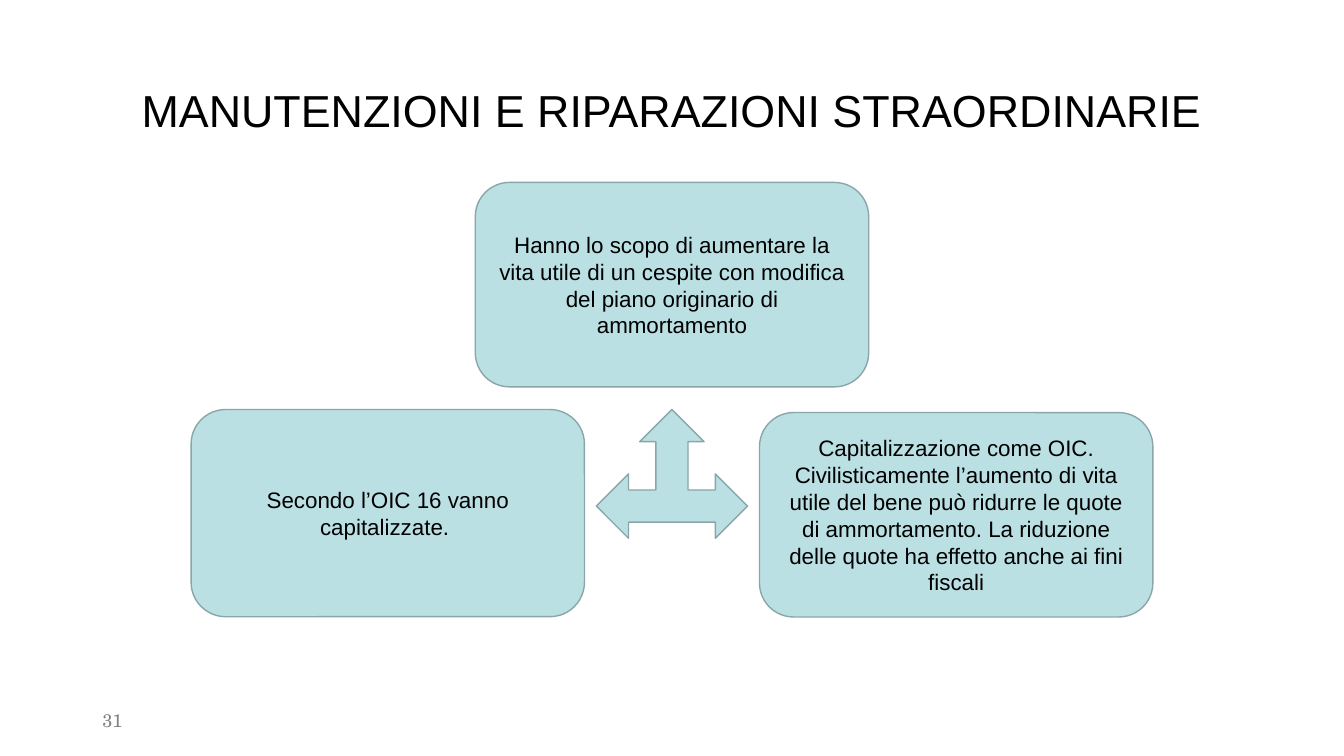
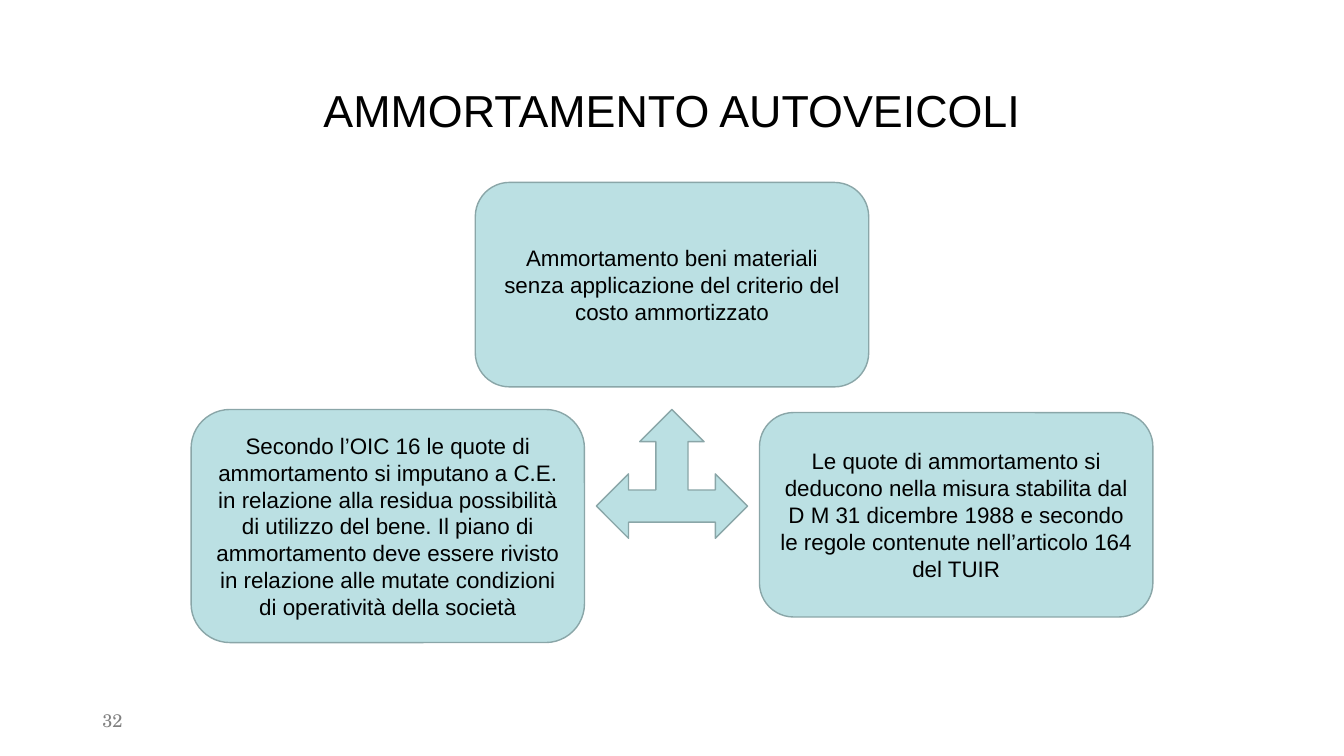
from pptx import Presentation
from pptx.dml.color import RGBColor
from pptx.enum.shapes import MSO_SHAPE
from pptx.enum.text import MSO_ANCHOR, MSO_AUTO_SIZE, PP_ALIGN
from pptx.util import Pt

ROUNDED = MSO_SHAPE.ROUNDED_RECTANGLE
THREE_WAY_ARROW = MSO_SHAPE.LEFT_RIGHT_UP_ARROW
MIDDLE = MSO_ANCHOR.MIDDLE
NO_FIT = MSO_AUTO_SIZE.NONE
LEFT, CENTER = PP_ALIGN.LEFT, PP_ALIGN.CENTER

COLORS = {"text": "000000", "number": "808080", "fill": "BBE0E3", "line": "8AA6A8"}
BODY_FONT, NUMBER_FONT = "Arial", "TeX Gyre Schola"

PAGE_WIDTH, PAGE_HEIGHT = 960, 540
MARGIN = 66
MIDDLE_X = PAGE_WIDTH / 2
BOX_WIDTH, BOX_HEIGHT = 281, 146
SIDE_OFFSET = 203  # from the page's middle to the near edge's opposite side box center
SIDE_CENTER = SIDE_OFFSET
ARROW_WIDTH, ARROW_HEIGHT = 108, 92
TOP_Y, ARROW_Y, RIGHT_Y = 130.3, 292.5, 294.7

FIRST_NUMBER = 31
SLIDES = [
    {
        "title": "MANUTENZIONI E RIPARAZIONI STRAORDINARIE",
        "top": "Hanno lo scopo di aumentare la vita utile di un cespite con modifica "
               "del piano originario di ammortamento",
        "left": "Secondo l’OIC 16 vanno capitalizzate. ",
        "left_height": 148,
        "right": "Capitalizzazione come OIC. Civilisticamente l’aumento di vita utile del "
                 "bene può ridurre le quote di ammortamento. La riduzione delle quote ha "
                 "effetto anche ai fini fiscali",
    },
    {
        "title": "AMMORTAMENTO AUTOVEICOLI",
        "top": "Ammortamento beni materiali senza applicazione del criterio del costo "
               "ammortizzato",
        "left": "Secondo l’OIC 16 le quote di ammortamento si imputano a C.E. in relazione "
                "alla residua possibilità di utilizzo del bene. Il piano di ammortamento "
                "deve essere rivisto in relazione alle mutate condizioni di operatività "
                "della società",
        "left_height": 166.5,
        "right": "Le quote di ammortamento si deducono nella misura stabilita dal D M 31 "
                 "dicembre 1988 e secondo le regole contenute nell’articolo 164 del TUIR",
    },
]


def write(shape, text, size, color="text", font=BODY_FONT, align=CENTER, spacing=1.0):
    frame = shape.text_frame
    frame.word_wrap = True
    frame.auto_size = NO_FIT
    frame.vertical_anchor = MIDDLE
    para = frame.paragraphs[0]
    para.text = text
    para.alignment = align
    para.line_spacing = spacing
    para.font.name = font
    para.font.size = Pt(size)
    para.font.color.rgb = RGBColor.from_string(COLORS[color])


def add_title(page, text):
    title = page.shapes.title
    title.left, title.top = Pt(MARGIN), Pt(29)
    title.width, title.height = Pt(PAGE_WIDTH - 2 * MARGIN), Pt(104)
    write(title, text, 32, spacing=0.9)


def add_number(page, number):
    box = page.shapes.add_textbox(Pt(MARGIN), Pt(500.5), Pt(216), Pt(29))
    write(box, str(number), 13, "number", NUMBER_FONT, LEFT, 0.93)


def add_centered_shape(page, kind, center_x, top, width, height):
    """Add a shape in the common fill and line, centred on center_x."""
    shape = page.shapes.add_shape(
        kind, Pt(center_x - width / 2), Pt(top), Pt(width), Pt(height))
    shape.shadow.inherit = False
    shape.fill.solid()
    shape.fill.fore_color.rgb = RGBColor.from_string(COLORS["fill"])
    shape.line.color.rgb = RGBColor.from_string(COLORS["line"])
    shape.line.width = Pt(1)
    return shape


def add_box(page, text, center_x, top, height=BOX_HEIGHT):
    box = add_centered_shape(page, ROUNDED, center_x, top, BOX_WIDTH, height)
    write(box, text, 16)


def add_page(deck, content, number):
    page = deck.slides.add_slide(deck.slide_layouts.get_by_name("Title Only"))
    add_title(page, content["title"])
    add_number(page, number)
    add_box(page, content["top"], MIDDLE_X, TOP_Y)
    add_centered_shape(page, THREE_WAY_ARROW, MIDDLE_X, ARROW_Y, ARROW_WIDTH, ARROW_HEIGHT)
    add_box(page, content["left"], MIDDLE_X - SIDE_CENTER, ARROW_Y, content["left_height"])
    add_box(page, content["right"], MIDDLE_X + SIDE_CENTER, RIGHT_Y)


def main():
    deck = Presentation()
    deck.slide_width, deck.slide_height = Pt(PAGE_WIDTH), Pt(PAGE_HEIGHT)
    for number, content in enumerate(SLIDES, FIRST_NUMBER):
        add_page(deck, content, number)
    deck.save("out.pptx")


if __name__ == "__main__":
    main()
